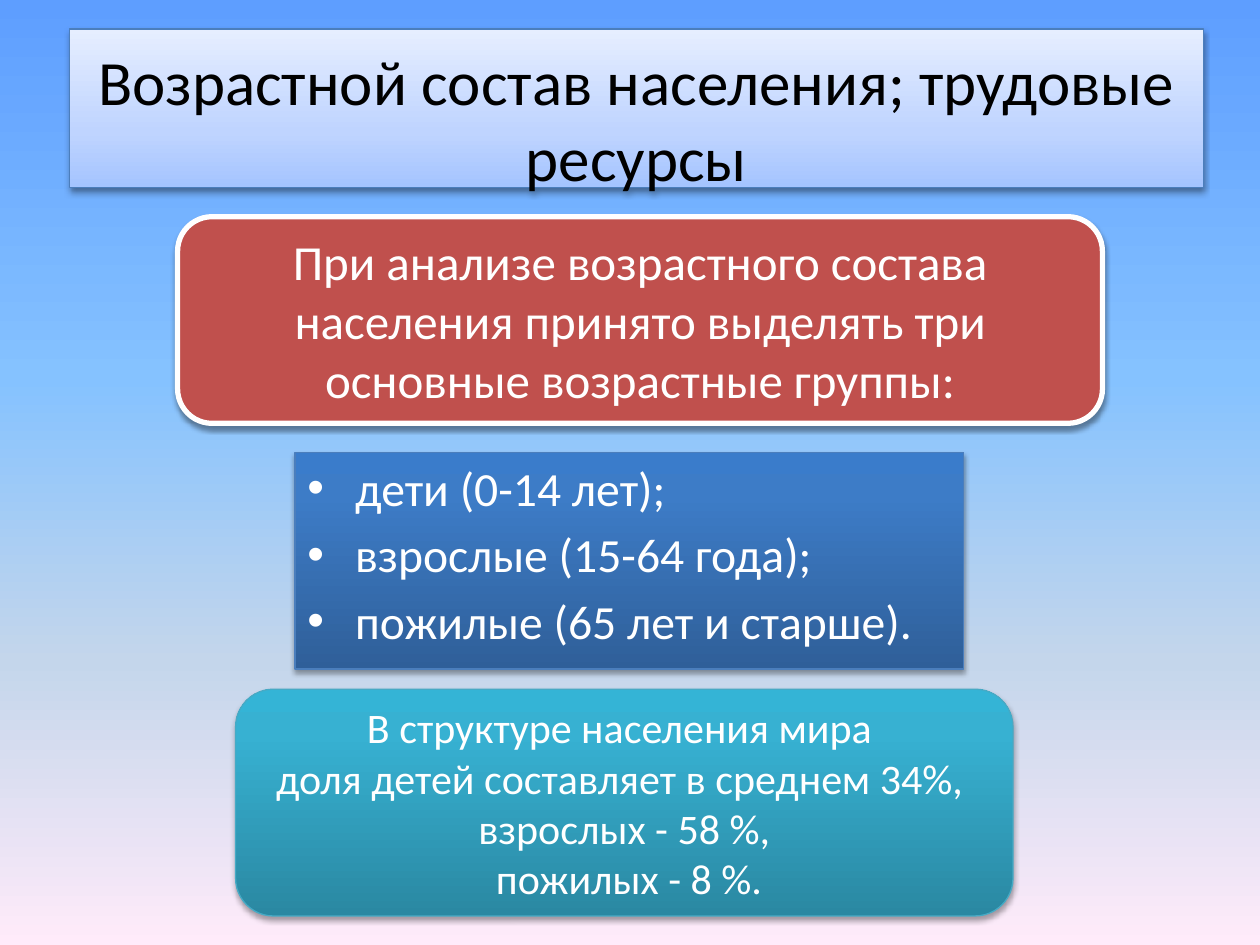
from dataclasses import dataclass

from pptx import Presentation
from pptx.dml.color import RGBColor
from pptx.enum.shapes import MSO_SHAPE
from pptx.enum.text import MSO_ANCHOR, MSO_AUTO_SIZE, PP_ALIGN
from pptx.oxml import parse_xml
from pptx.oxml.ns import nsdecls, qn
from pptx.util import Inches, Pt

RECTANGLE, ROUNDED = MSO_SHAPE.RECTANGLE, MSO_SHAPE.ROUNDED_RECTANGLE
TOP, MIDDLE = MSO_ANCHOR.TOP, MSO_ANCHOR.MIDDLE
LEFT, CENTER = PP_ALIGN.LEFT, PP_ALIGN.CENTER
FONT = "Calibri"
TITLE_ONLY = 5
DOWN, UP = 270, 90  # gradient angles, counter-clockwise

COLORS = {
    "black": "000000",
    "white": "FFFFFF",
    "red": "C0504D",
    "blue line": "4B7EBC",
    "teal line": "46AAC5",
}
# Gradient stops: position in percent, colour
SKY = ((0, "5E9EFF"), (40, "85C2FF"), (70, "C4D6EB"), (100, "FFEBFA"))
PALE = ((0, "A4C4FF"), (35, "BFD4FF"), (100, "E6EEFF"))
BLUE = ((0, "2F5F99"), (80, "3D7CC7"), (100, "3A7CCB"))
TEAL = ((0, "2A88A2"), (80, "37B1D2"), (100, "34B4D6"))


@dataclass
class Panel:
    box: tuple
    lines: tuple
    size: float
    fill: str | tuple  # colour name or gradient stops
    line: str
    line_width: float = 0.75
    preset: int = RECTANGLE
    text_color: str = "white"
    anchor: int = MIDDLE
    bullets: bool = False
    top_inset: float = 0.05
    shadow: tuple = (38, 1.6)  # opacity in percent, distance in points


TITLE = Panel((0.55, 0.23, 9, 1.26), ("Возрастной состав населения; трудовые ресурсы",),
              36, PALE, "blue line", text_color="black", top_inset=0.21)
PANELS = (
    Panel((2.34, 3.59, 5.31, 1.72),
          ("дети (0-14 лет);", "взрослые (15-64 года);", "пожилые (65 лет и старше)."),
          27.2, BLUE, "blue line", anchor=TOP, bullets=True, shadow=(35, 1.8)),
    Panel((1.41, 1.72, 7.34, 1.64),
          ("При анализе возрастного состава населения принято выделять "
           "три основные возрастные группы:",),
          28, "red", "white", line_width=3, preset=ROUNDED),
    Panel((1.87, 5.47, 6.17, 1.8),
          ("В структуре населения мира ", "доля детей составляет в среднем 34%, ",
           "взрослых - 58 %,", " пожилых - 8 %."),
          24, TEAL, "teal line", preset=ROUNDED, shadow=(35, 1.8)),
)


def set_values(target, values: dict) -> None:
    for name, value in values.items():
        setattr(target, name, value)


def color(name: str) -> RGBColor:
    return RGBColor.from_string(COLORS[name])


def fill_gradient(fill, element, stops: tuple, angle: int) -> None:
    fill.gradient()
    fill.gradient_angle = angle
    stop_list = element.find(".//" + qn("a:gsLst"))
    for stop in list(stop_list):
        stop_list.remove(stop)
    for position, value in stops:
        stop_list.append(parse_xml(
            f'<a:gs {nsdecls("a")} pos="{position * 1000}"><a:srgbClr val="{value}"/></a:gs>'))


def add_shadow(shape, opacity: float, distance: float) -> None:
    shape.shadow.inherit = False
    effects = shape.element.spPr.find(qn("a:effectLst"))
    effects.append(parse_xml(
        f'<a:outerShdw {nsdecls("a")} blurRad="{Pt(3.1)}" dist="{Pt(distance)}" '
        f'dir="5400000" rotWithShape="0"><a:srgbClr val="{COLORS["black"]}">'
        f'<a:alpha val="{opacity * 1000}"/></a:srgbClr></a:outerShdw>'))


def add_bullet(paragraph) -> None:
    paragraph.space_before = Pt(5.4)
    properties = paragraph._p.get_or_add_pPr()
    properties.set("marL", str(Inches(0.38)))
    properties.set("indent", str(Inches(-0.38)))
    properties.append(parse_xml(f'<a:buFont {nsdecls("a")} typeface="Arial"/>'))
    properties.append(parse_xml(f'<a:buChar {nsdecls("a")} char="•"/>'))


def write_text(shape, panel: Panel) -> None:
    frame = shape.text_frame
    set_values(frame, {"word_wrap": True, "auto_size": MSO_AUTO_SIZE.NONE,
                       "vertical_anchor": panel.anchor,
                       "margin_top": Inches(panel.top_inset)})
    frame.text = "\n".join(panel.lines)
    for paragraph in frame.paragraphs:
        paragraph.alignment = LEFT if panel.bullets else CENTER
        if panel.bullets:
            add_bullet(paragraph)
        font = paragraph.runs[0].font
        set_values(font, {"name": FONT, "size": Pt(panel.size)})
        font.color.rgb = color(panel.text_color)


def format_panel(shape, panel: Panel) -> None:
    if isinstance(panel.fill, str):
        shape.fill.solid()
        shape.fill.fore_color.rgb = color(panel.fill)
    else:
        fill_gradient(shape.fill, shape.element, panel.fill, UP)
    shape.line.color.rgb = color(panel.line)
    shape.line.width = Pt(panel.line_width)
    add_shadow(shape, *panel.shadow)
    write_text(shape, panel)


def main() -> None:
    presentation = Presentation()
    set_values(presentation, {"slide_width": Inches(10), "slide_height": Inches(7.5)})
    slide = presentation.slides.add_slide(presentation.slide_layouts[TITLE_ONLY])

    # Background
    fill_gradient(slide.background.fill, slide.element, SKY, DOWN)

    # Title
    title = slide.shapes.title
    set_values(title, dict(zip(("left", "top", "width", "height"), map(Inches, TITLE.box))))
    format_panel(title, TITLE)

    # Age groups, introduction and world shares
    for panel in PANELS:
        format_panel(slide.shapes.add_shape(panel.preset, *map(Inches, panel.box)), panel)

    presentation.save("out.pptx")


if __name__ == "__main__":
    main()
